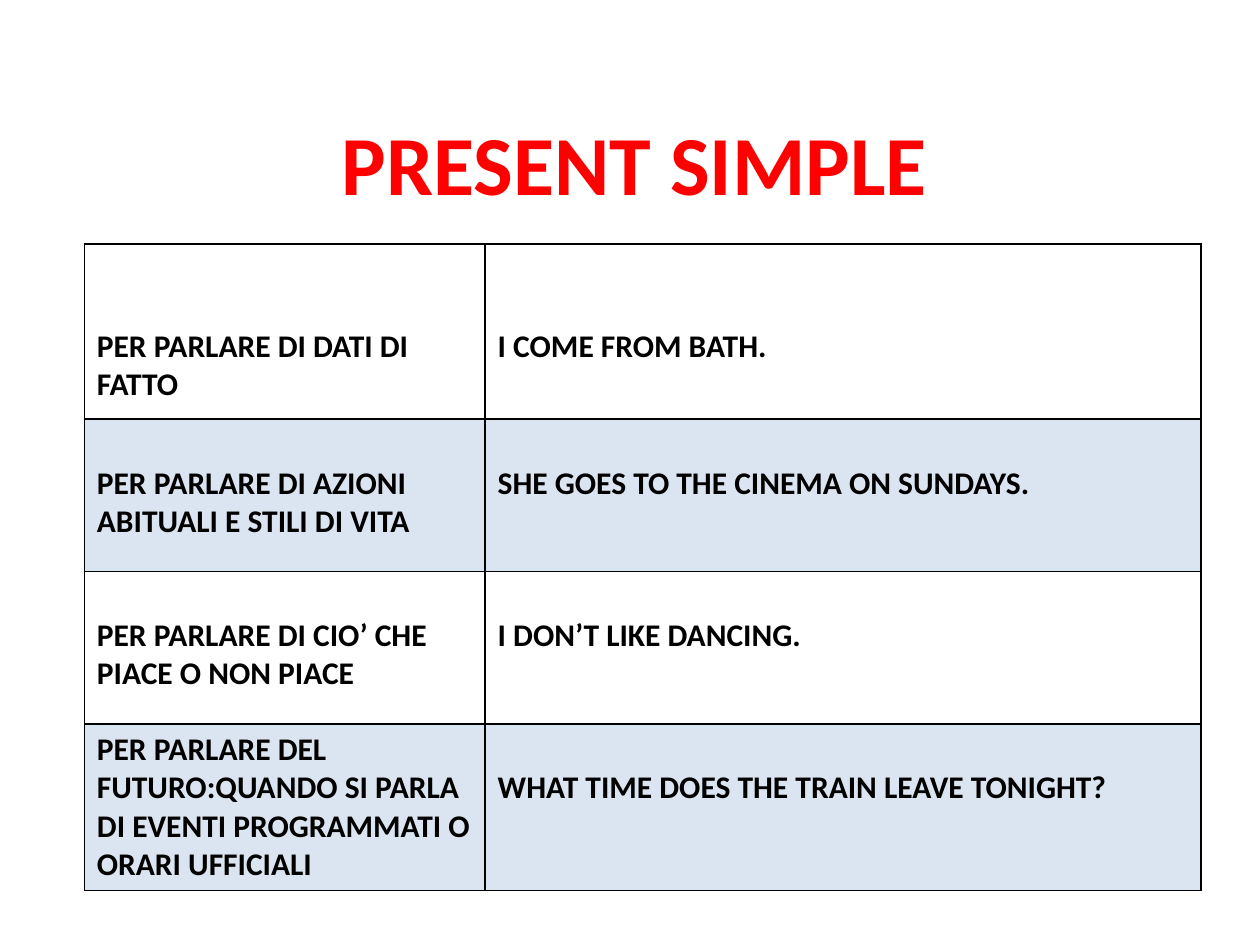
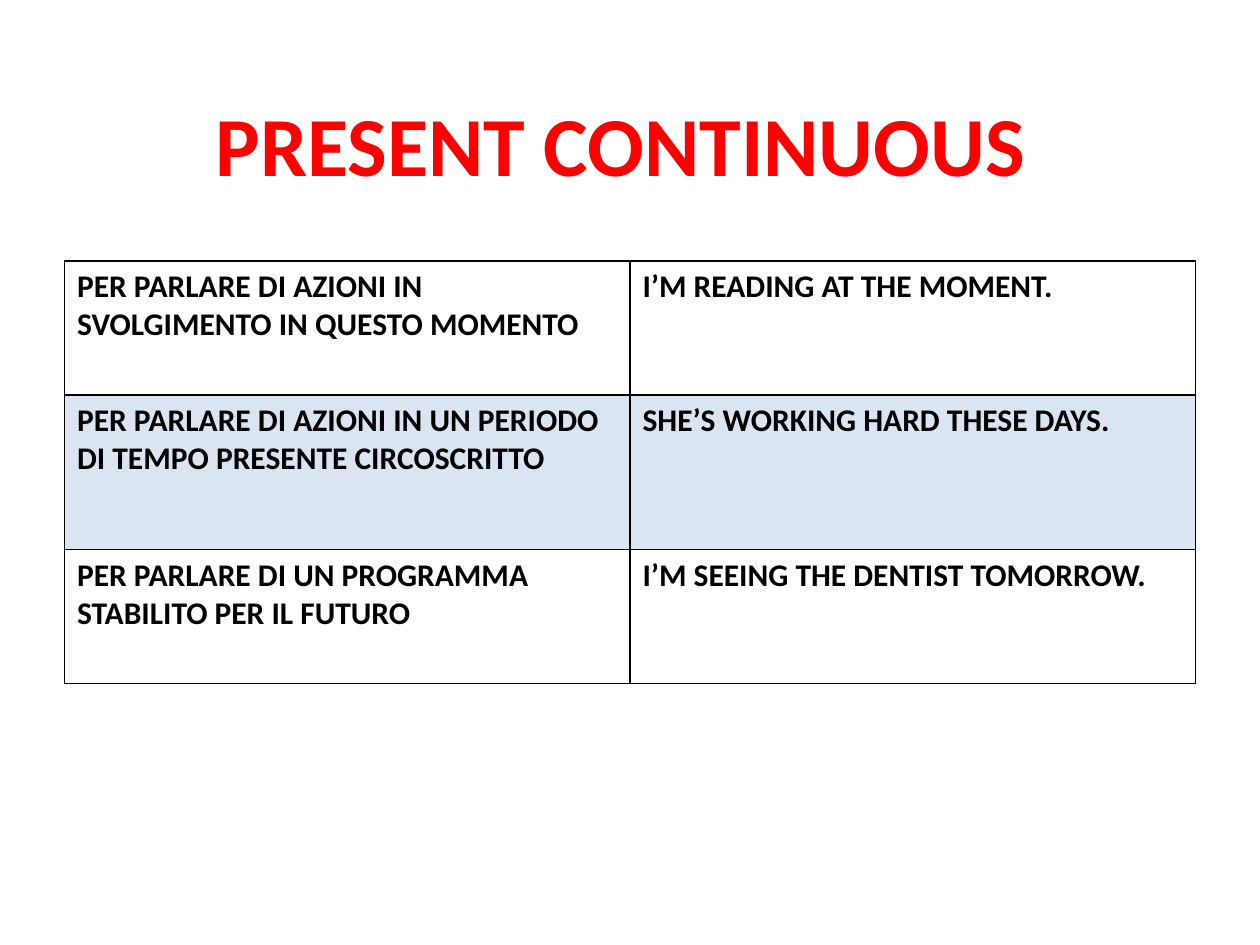
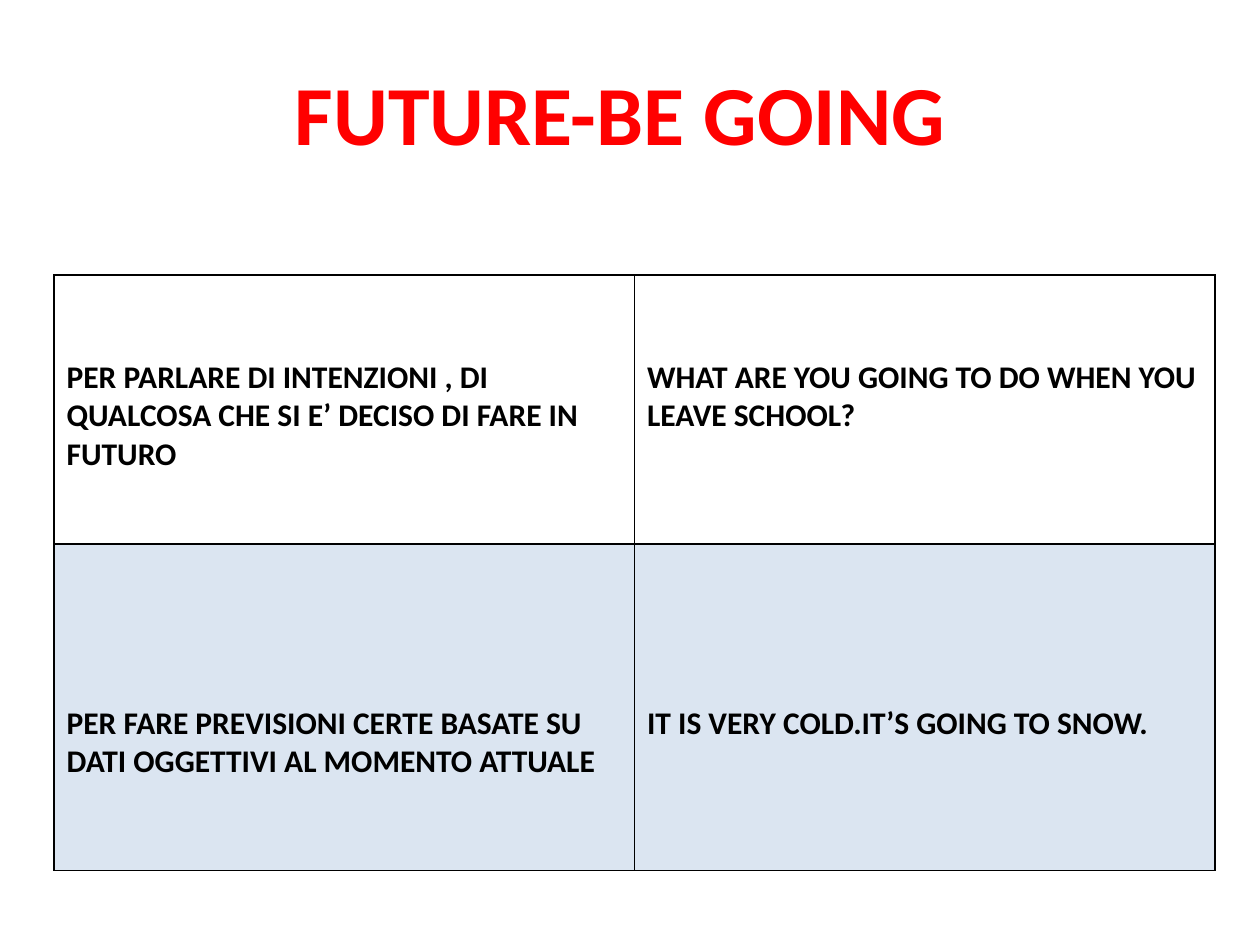
from lxml.etree import SubElement
from pptx import Presentation
from pptx.dml.color import RGBColor
from pptx.enum.text import MSO_ANCHOR, MSO_AUTO_SIZE, PP_ALIGN
from pptx.oxml import parse_xml
from pptx.oxml.ns import nsdecls, qn
from pptx.util import Cm, Pt

RED = RGBColor(0xFF, 0x00, 0x00)
BLACK = RGBColor(0x00, 0x00, 0x00)
BLUE = RGBColor(0x4F, 0x81, 0xBD)
BAND_ALPHA = 20000
FONT = "Calibri"
TITLE_HEIGHT = 2.31
CELL_MARGIN = 0.13
LINE_HEIGHT = 0.775

# Each row: height, (use, blank lines above it), (example, blank lines above it)
TENSES = [
    {
        "title": "PRESENT SIMPLE",
        "title_box": (0.89, 2.13, 23.8),
        "align": PP_ALIGN.CENTER,
        "corner": (1.7, 4.92),
        "columns": (8.08, 14.43),
        "rows": [
            (3.53, ("PER PARLARE DI DATI DI FATTO", 2),
             ("I COME FROM BATH.", 2)),
            (3.07, ("PER PARLARE DI AZIONI ABITUALI E STILI DI VITA", 1),
             ("SHE GOES TO THE CINEMA ON SUNDAYS.", 1)),
            (3.07, ("PER PARLARE DI CIO’ CHE PIACE O NON PIACE", 1),
             ("I DON’T LIKE DANCING.", 1)),
            (3.31, ("PER PARLARE DEL FUTURO:QUANDO SI PARLA DI EVENTI "
                    "PROGRAMMATI O ORARI UFFICIALI", 0),
             ("WHAT TIME DOES THE TRAIN LEAVE TONIGHT?", 1)),
        ],
    },
    {
        "title": "PRESENT CONTINUOUS",
        "title_box": (4.09, 1.73, 20.8),
        "align": PP_ALIGN.LEFT,
        "corner": (1.3, 5.26),
        "columns": (11.4, 11.4),
        "rows": [
            (2.7, ("PER PARLARE DI AZIONI IN SVOLGIMENTO IN QUESTO MOMENTO", 0),
             ("I’M READING AT THE MOMENT.", 0)),
            (3.12, ("PER PARLARE DI AZIONI IN UN PERIODO DI TEMPO PRESENTE "
                    "CIRCOSCRITTO", 0),
             ("SHE’S WORKING HARD THESE DAYS.", 0)),
            (2.7, ("PER PARLARE DI UN PROGRAMMA STABILITO PER IL FUTURO", 0),
             ("I’M SEEING THE DENTIST TOMORROW.", 0)),
        ],
    },
    {
        "title": "FUTURE-BE GOING",
        "title_box": (5.69, 1.12, 13.8),
        "align": PP_ALIGN.LEFT,
        "corner": (1.09, 5.54),
        "columns": (11.7, 11.7),
        "rows": [
            (5.43, ("PER PARLARE DI INTENZIONI , DI QUALCOSA CHE SI E’ DECISO "
                    "DI FARE IN FUTURO", 2),
             ("WHAT ARE YOU GOING TO DO WHEN YOU LEAVE SCHOOL?", 2)),
            (6.58, ("PER FARE PREVISIONI CERTE BASATE SU DATI OGGETTIVI AL "
                    "MOMENTO ATTUALE", 4),
             ("IT IS VERY COLD.IT’S GOING TO SNOW.", 4)),
        ],
    },
]


def write(frame, text, size, color, align):
    frame.text = text
    paragraph = frame.paragraphs[0]
    paragraph.alignment = align
    font = paragraph.runs[0].font
    font.name, font.size, font.bold = FONT, Pt(size), True
    font.color.rgb = color


def add_title(slide, tense):
    title = slide.shapes.title
    title.left, title.top, title.width = map(Cm, tense["title_box"])
    title.height = Cm(TITLE_HEIGHT)
    frame = title.text_frame
    write(frame, tense["title"], 48, RED, tense["align"])
    frame.word_wrap = True
    frame.auto_size = MSO_AUTO_SIZE.NONE
    frame.vertical_anchor = MSO_ANCHOR.TOP


def fill_cell(cell, banded):
    if not banded:
        cell.fill.background()
        return
    cell.fill.solid()
    cell.fill.fore_color.rgb = BLUE
    color = next(cell._tc.tcPr.iter(qn("a:srgbClr")))
    SubElement(color, qn("a:alpha"), val=str(BAND_ALPHA))


def add_borders(cell):
    for place, side in enumerate("LRTB"):
        border = parse_xml(
            f'<a:ln{side} {nsdecls("a")} w="{Pt(1)}"><a:solidFill>'
            f'<a:srgbClr val="{BLACK}"/></a:solidFill></a:ln{side}>')
        cell._tc.tcPr.insert(place, border)


def add_uses(slide, tense):
    rows, columns = tense["rows"], tense["columns"]
    left, top = tense["corner"]
    height = sum(row[0] for row in rows)
    uses = slide.shapes.add_table(
        len(rows), len(columns), Cm(left), Cm(top),
        Cm(sum(columns)), Cm(height)).table
    uses.first_row = uses.horz_banding = False
    for column, width in zip(uses.columns, columns):
        column.width = Cm(width)
    for r, (row_height, *entries) in enumerate(rows):
        uses.rows[r].height = Cm(row_height)
        for c, (text, lines_above) in enumerate(entries):
            cell = uses.cell(r, c)
            write(cell.text_frame, text, 18, BLACK, PP_ALIGN.LEFT)
            cell.margin_top = Cm(CELL_MARGIN + lines_above * LINE_HEIGHT)
            fill_cell(cell, banded=r % 2 == 1)
            add_borders(cell)


def main():
    deck = Presentation()
    deck.slide_width, deck.slide_height = Cm(25.4), Cm(19.05)
    title_only = deck.slide_layouts[5]
    for tense in TENSES:
        slide = deck.slides.add_slide(title_only)
        add_title(slide, tense)
        add_uses(slide, tense)
    deck.save("out.pptx")


if __name__ == "__main__":
    main()
